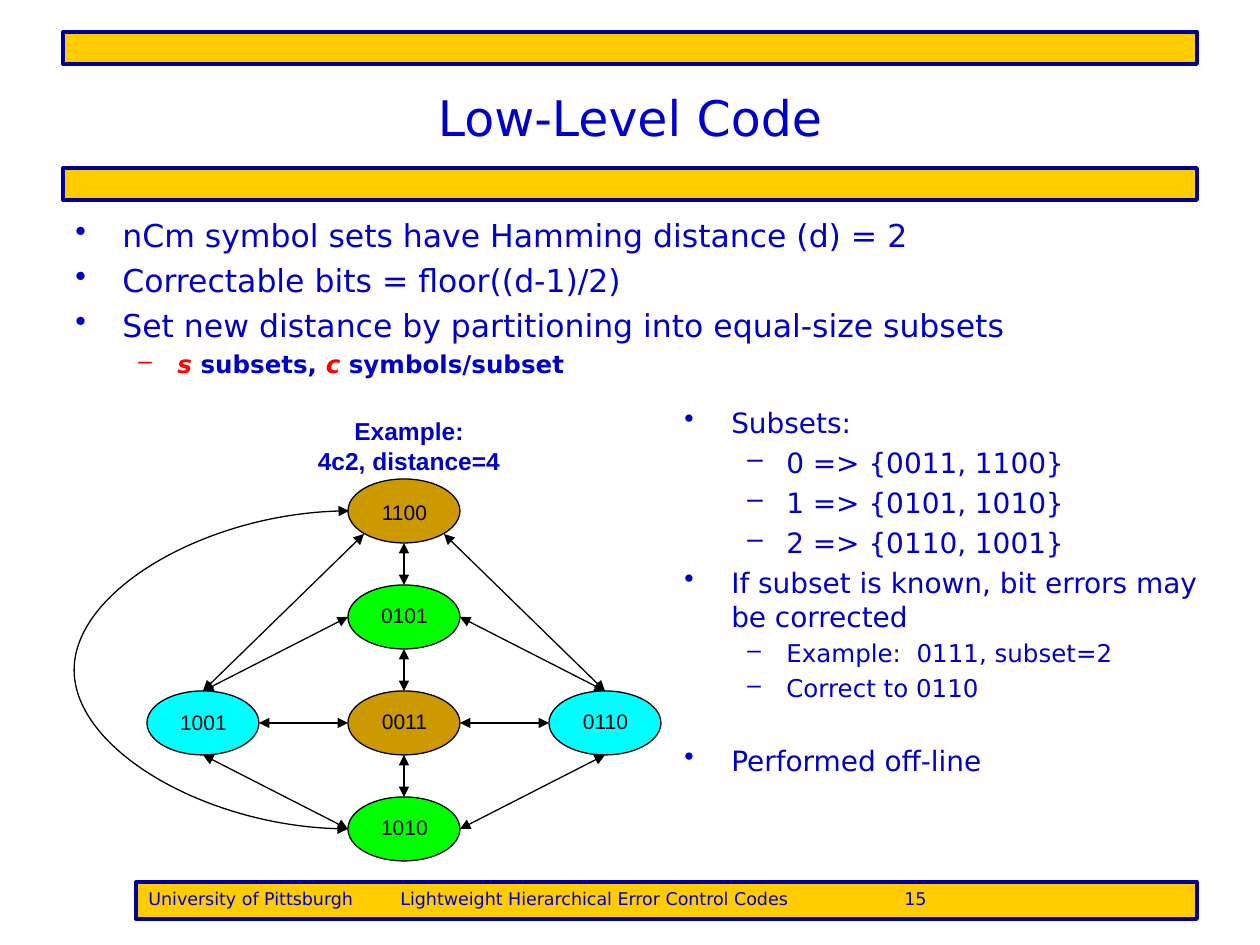
from lxml import etree
from pptx import Presentation
from pptx.dml.color import RGBColor
from pptx.enum.shapes import MSO_CONNECTOR, MSO_SHAPE
from pptx.enum.text import MSO_ANCHOR, PP_ALIGN
from pptx.oxml.ns import qn
from pptx.util import Pt

PX = 914400 // 126
RECT, OVAL = MSO_SHAPE.RECTANGLE, MSO_SHAPE.OVAL
LINE, CURVE = MSO_CONNECTOR.STRAIGHT, MSO_CONNECTOR.CURVE
LEFT, CENTER = PP_ALIGN.LEFT, PP_ALIGN.CENTER
TOP, MIDDLE = MSO_ANCHOR.TOP, MSO_ANCHOR.MIDDLE
BLUE = RGBColor(0x00, 0x00, 0xCC)
NAVY = RGBColor(0x00, 0x00, 0x99)
GOLD = RGBColor(0xFF, 0xCC, 0x00)
BROWN = RGBColor(0xCC, 0x99, 0x00)
GREEN = RGBColor(0x00, 0xFF, 0x00)
CYAN = RGBColor(0x00, 0xFF, 0xFF)
RED = RGBColor(0xFF, 0x00, 0x00)
BLACK = RGBColor(0x00, 0x00, 0x00)
SANS, ARIAL = "DejaVu Sans", "Arial"

prs = Presentation()
prs.slide_width, prs.slide_height = 1260 * PX, 945 * PX
slide = prs.slides.add_slide(prs.slide_layouts[6])
shapes = slide.shapes


def add_box(kind, box, fill, line, width):
    shape = shapes.add_shape(kind, *[n * PX for n in box])
    shape.shadow.inherit = False
    shape.fill.solid()
    shape.fill.fore_color.rgb = fill
    shape.line.color.rgb = line
    shape.line.width = Pt(width)
    return shape


def add_text(box, rows, face, color, align=LEFT, anchor=TOP, bold=False):
    """Each row is (text, size, level, extra space); level None has no bullet."""
    frame = shapes.add_textbox(*[n * PX for n in box]).text_frame
    frame.word_wrap = True
    frame.vertical_anchor = anchor
    for i, (text, size, level, extra) in enumerate(rows):
        para = frame.paragraphs[0] if i == 0 else frame.add_paragraph()
        para.text = text
        para.alignment = align
        if level is not None:
            para.level = level
            indent = (47, 39)[level] * PX
            props = para._p.get_or_add_pPr()
            props.set("marL", str((47, 102)[level] * PX))
            props.set("indent", str(-indent))
            if i:
                para.space_before = Pt(round(size * 0.23 + extra, 1))
            etree.SubElement(props, qn("a:buChar"), char="•–"[level])
        font = para.font
        font.name, font.size, font.bold = face, Pt(size), bold
        font.color.rgb = color
    return frame


# Title bars and footer
for y in (168, 32):
    add_box(RECT, (63, y, 1134, 32), GOLD, NAVY, 2.25)
foot = add_box(RECT, (136, 882, 1061, 37), GOLD, NAVY, 2.25).text_frame
foot.vertical_anchor = TOP
para = foot.paragraphs[0]
para.text = "University of Pittsburgh\tLightweight Hierarchical Error Control Codes\t15"
para.alignment = LEFT
tabs = etree.SubElement(para._p.get_or_add_pPr(), qn("a:tabLst"))
for stop in (252, 756):
    etree.SubElement(tabs, qn("a:tab"), pos=str(stop * PX), algn="l")
para.font.name, para.font.size = SANS, Pt(10)
para.font.color.rgb = BLUE

# Title and main points
add_text((63, 38, 1134, 158), [("Low-Level Code", 28, None, 0)],
         SANS, BLUE, CENTER, MIDDLE)
body = add_text((63, 210, 1134, 189), [
    ("nCm symbol sets have Hamming distance (d) = 2", 18, 0, 0),
    ("Correctable bits = floor((d-1)/2)", 18, 0, 0),
    ("Set new distance by partitioning into equal-size subsets", 18, 0, 0),
    ("", 14, 1, 0),
], SANS, BLUE)
para = body.paragraphs[3]
para.font.bold = True
for text, key in (("s", True), (" subsets, ", False),
                  ("c", True), (" symbols/subset", False)):
    run = para.add_run()
    run.text = text
    run.font.italic = key
    run.font.color.rgb = RED if key else BLUE

# Code words: column, row, fill, label drop
W, H = 112, 64
nodes = {
    "0011": (1, 2, BROWN, 11),
    "0101": (1, 1, GREEN, 11),
    "1010": (1, 3, GREEN, 11),
    "1001": (0, 2, CYAN, 12),
    "0110": (2, 2, CYAN, 11),
    "1100": (1, 0, BROWN, 14),
}
spots = {}
for code, (col, row, fill, drop) in nodes.items():
    x, y = 147 + 201 * col, 479 + 106 * row
    spots[code] = x, y
    add_box(OVAL, (x, y, W, H), fill, BLACK, 0.75)
    add_text((x + 12, y + drop, 89, 38), [(code, 12, None, 0)],
             ARIAL, BLACK, CENTER)

# Links between code words, from side to side
sides = {"T": (56, 0), "B": (56, 64), "L": (0, 32), "R": (112, 32),
         "BL": (16, 55), "BR": (96, 55)}
links = [
    ("0011", "L", "1001", "R"), ("0011", "B", "1010", "T"),
    ("0011", "R", "0110", "L"), ("0011", "T", "0101", "B"),
    ("0101", "L", "1001", "T"), ("0101", "R", "0110", "T"),
    ("0101", "T", "1100", "B"), ("1001", "B", "1010", "L"),
    ("1010", "R", "0110", "B"), ("1010", "L", "1100", "L"),
    ("1100", "BL", "1001", "T"), ("1100", "BR", "0110", "T"),
]
for start, out, end, into in links:
    bent = out == into
    x1, y1 = [a + b for a, b in zip(spots[start], sides[out])]
    x2, y2 = [a + b for a, b in zip(spots[end], sides[into])]
    # The curve spans one px so that its bulge can be set as a share of it
    link = shapes.add_connector(CURVE if bent else LINE, x1 * PX, y1 * PX,
                                (x2 + bent) * PX, y2 * PX)
    link.line.color.rgb = BLACK
    link.line.width = Pt(0.75)
    props = link._element.spPr
    if bent:
        etree.SubElement(props.find(qn("a:prstGeom")).find(qn("a:avLst")),
                         qn("a:gd"), name="adj1", fmla="val -27600000")
    for tip in ("a:headEnd", "a:tailEnd"):
        etree.SubElement(link.line._get_or_add_ln(), qn(tip), type="triangle")
    etree.SubElement(props, qn("a:effectLst"))

# Example heading and subset notes
add_text((220, 410, 378, 72), [("Example:", 14, None, 0),
                               ("4c2, distance=4", 14, None, 0)],
         ARIAL, BLUE, CENTER, bold=True)
add_text((672, 399, 546, 420), [
    ("Subsets:", 16, 0, 0),
    ("0 => {0011, 1100}", 16, 1, 0),
    ("1 => {0101, 1010}", 16, 1, 0),
    ("2 => {0110, 1001}", 16, 1, 0),
    ("If subset is known, bit errors may be corrected", 16, 0, 0),
    ("Example:  0111, subset=2", 14, 1, 0),
    ("Correct to 0110", 14, 1, 0),
    ("Performed off-line", 16, 0, 19.5),
], SANS, BLUE)

prs.save("out.pptx")
